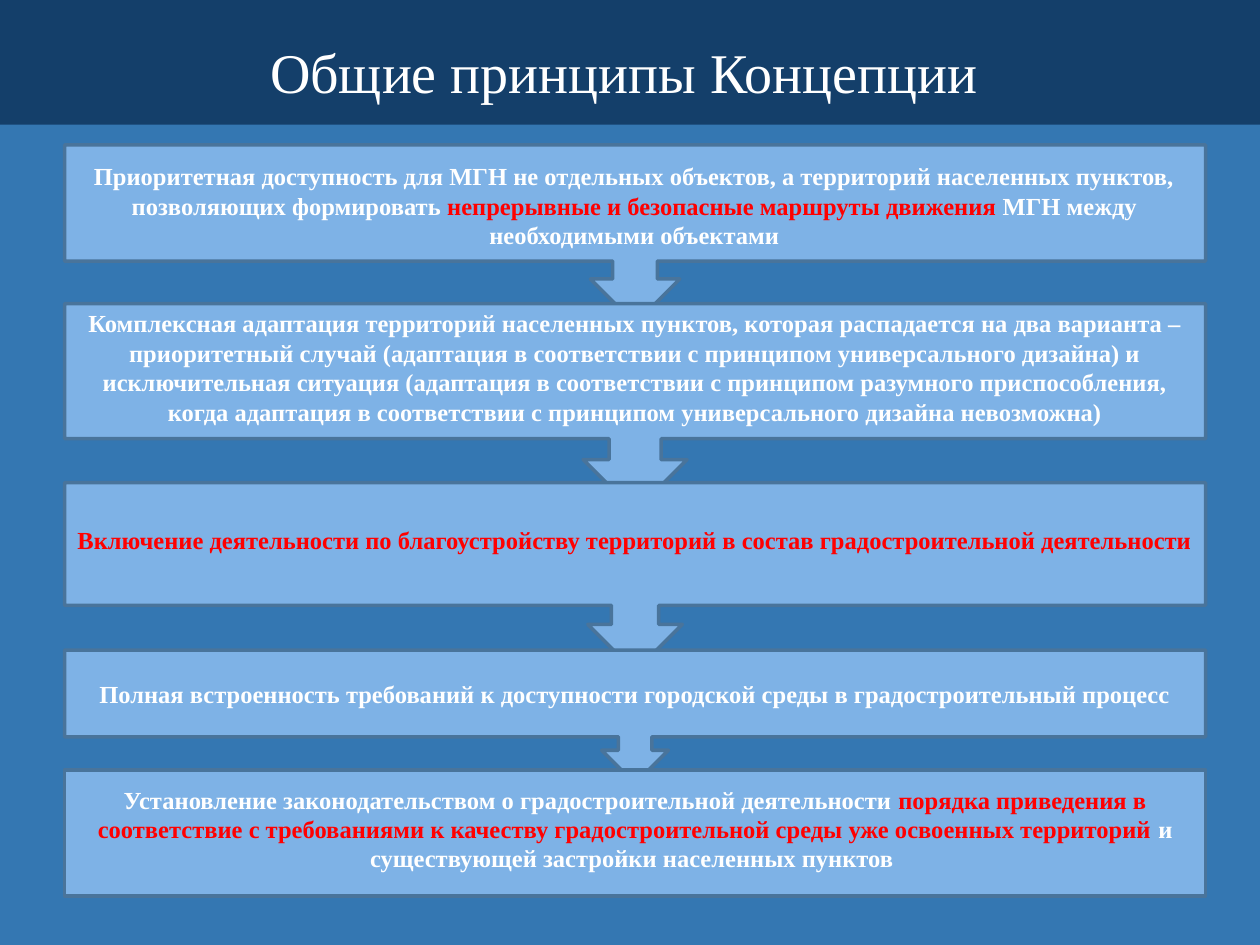
from pptx import Presentation
from pptx.dml.color import RGBColor
from pptx.enum.shapes import MSO_SHAPE
from pptx.enum.text import MSO_ANCHOR, PP_ALIGN
from pptx.util import Pt

RECTANGLE = MSO_SHAPE.RECTANGLE
CALLOUT = MSO_SHAPE.DOWN_ARROW_CALLOUT
MIDDLE, TOP = MSO_ANCHOR.MIDDLE, MSO_ANCHOR.TOP
CENTER = PP_ALIGN.CENTER

COLORS = {
    "background": "3477B2",
    "band": "143F6A",
    "box": "7EB2E6",
    "border": "49749B",
    "plain": "FFFFFF",
    "accent": "FF0000",
}
TITLE = "Общие принципы Концепции "
FIRST_PRINCIPLE = [
    ("Приоритетная доступность для МГН не отдельных объектов, а территорий "
     "населенных пунктов, позволяющих формировать ", "plain"),
    ("непрерывные и безопасные маршруты движения ", "accent"),
    ("МГН между необходимыми объектами", "plain"),
]
PRINCIPLES = [
    (CALLOUT, 82.8, 102.2, 3.6, []),
    (CALLOUT, 173.5, 118.8, 8.2, [
        ("Комплексная адаптация территорий населенных пунктов, которая распадается "
         "на два варианта – приоритетный случай (адаптация в соответствии с принципом "
         "универсального дизайна) и исключительная ситуация (адаптация в соответствии "
         "с принципом разумного приспособления, когда адаптация в соответствии "
         "с принципом универсального дизайна невозможна)", "plain"),
    ]),
    (CALLOUT, 275.8, 108, 8.2, [
        ("Включение деятельности по благоустройству территорий в состав "
         "градостроительной деятельности", "accent"),
    ]),
    (CALLOUT, 371.5, 76.3, 3.6, [
        ("Полная встроенность требований к доступности городской среды "
         "в градостроительный процесс", "plain"),
    ]),
    (RECTANGLE, 439.9, 72, 8.2, [
        ("Установление законодательством о градостроительной деятельности ", "plain"),
        ("порядка приведения в соответствие с требованиями к качеству "
         "градостроительной среды уже освоенных территорий ", "accent"),
        ("и существующей застройки населенных пунктов ", "plain"),
    ]),
]
BOX_LEFT, BOX_WIDTH = 36.9, 652


def rgb(name):
    return RGBColor.from_string(COLORS[name])


def set_all(target, values):
    for name, value in values.items():
        setattr(target, name, value)


def write(shape, runs, size, bold, anchor, bottom=3.6):
    frame = shape.text_frame
    set_all(frame, {"word_wrap": True, "vertical_anchor": anchor,
                    "margin_bottom": Pt(bottom)})
    paragraph = frame.paragraphs[0]
    paragraph.alignment = CENTER
    for text, color in runs:
        run = paragraph.add_run()
        run.text = text
        set_all(run.font, {"name": "Times New Roman", "size": Pt(size), "bold": bold})
        run.font.color.rgb = rgb(color)


def add_box(slide, kind, left, top, width, height, fill, border=None):
    shape = slide.shapes.add_shape(kind, Pt(left), Pt(top), Pt(width), Pt(height))
    shape.shadow.inherit = False
    shape.fill.solid()
    shape.fill.fore_color.rgb = rgb(fill)
    if border:
        shape.line.color.rgb = rgb(border)
        shape.line.width = Pt(2)
    else:
        shape.line.fill.background()
    return shape


def main():
    presentation = Presentation()
    set_all(presentation, {"slide_width": Pt(720), "slide_height": Pt(540)})
    slide = presentation.slides.add_slide(presentation.slide_layouts[5])
    slide.background.fill.solid()
    slide.background.fill.fore_color.rgb = rgb("background")

    band = add_box(slide, RECTANGLE, 0, 0, 720, 71.3, "band")
    title = slide.shapes.title
    set_all(title, {"left": Pt(36.7), "top": Pt(9.4), "width": Pt(648), "height": Pt(62.6)})
    write(title, [(TITLE, "plain")], 32, False, MIDDLE)
    band.element.addnext(title.element)

    for kind, top, height, bottom, runs in PRINCIPLES:
        box = add_box(slide, kind, BOX_LEFT, top, BOX_WIDTH, height, "box", "border")
        if runs:
            write(box, runs, 14, True, MIDDLE, bottom)
        else:
            caption = slide.shapes.add_textbox(Pt(42.5), Pt(88.6), Pt(640), Pt(58.3))
            write(caption, FIRST_PRINCIPLE, 14, True, TOP)

    presentation.save("out.pptx")


if __name__ == "__main__":
    main()
